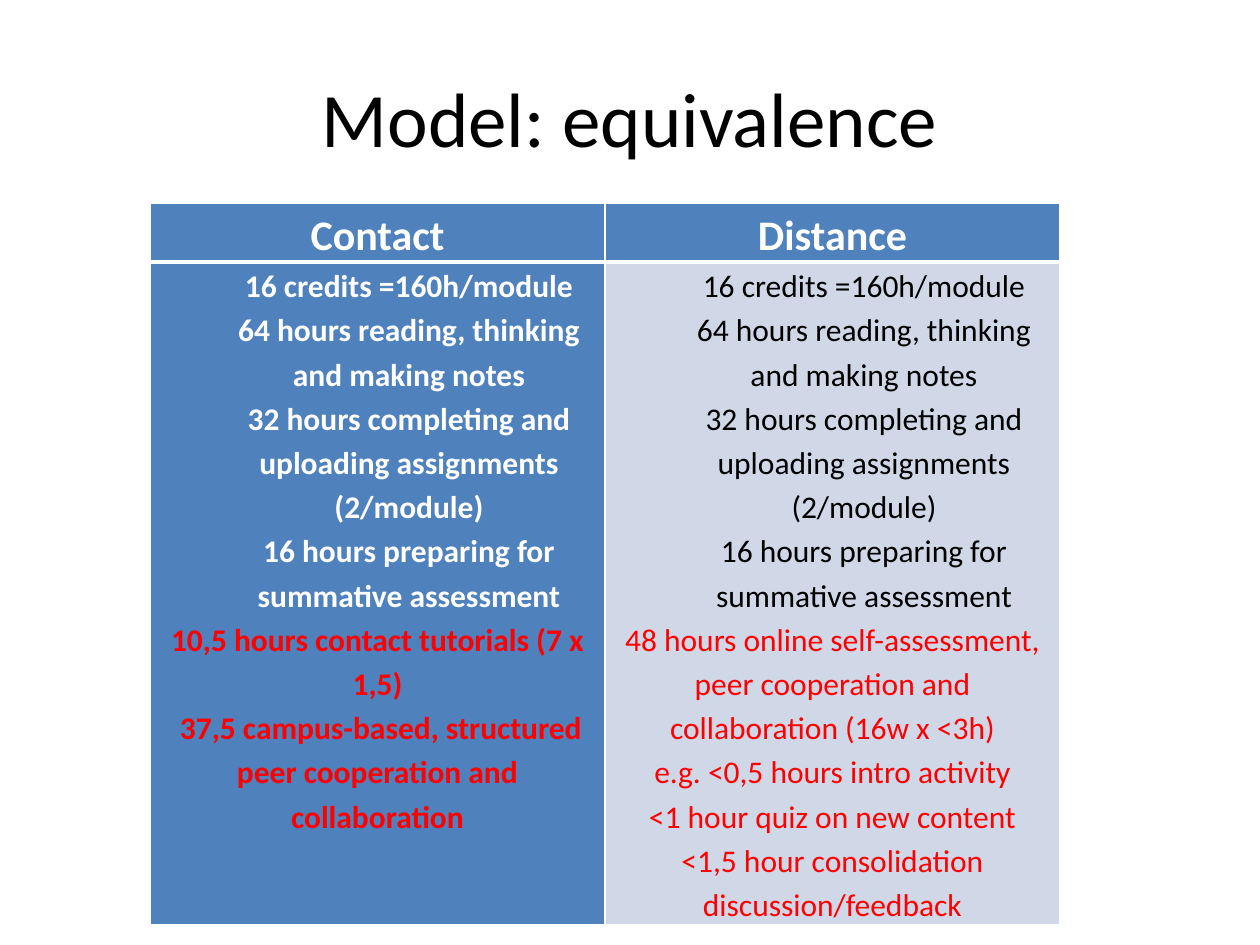
from dataclasses import dataclass

from lxml import etree
from pptx import Presentation
from pptx import util as u
from pptx.dml.color import RGBColor
from pptx.enum import text
from pptx.oxml.ns import qn

EMU_PER_PX = 914400 / 126


@dataclass(frozen=True)
class Theme:
    font: str = "Calibri"
    title_size: int = 44
    heading_size: int = 24
    body_size: int = 18
    ink: str = "000000"
    light: str = "FFFFFF"
    accent: str = "FF0000"
    strong_fill: str = "4F81BD"
    pale_fill: str = "D0D8E8"
    thin: int = 1
    thick: int = 3


THEME = Theme()

SHARED_HOURS = [
    "16 credits =160h/module",
    "64 hours reading, thinking and making notes",
    "32 hours completing and uploading assignments (2/module)",
    "16 hours preparing for summative assessment",
]
CONTACT_HOURS = [
    "10,5 hours contact tutorials (7 x 1,5)",
    " 37,5 campus-based, structured peer cooperation and collaboration",
]
DISTANCE_HOURS = [
    "48 hours online self-assessment, peer cooperation and collaboration (16w x <3h)",
    "e.g. <0,5 hours intro activity",
    "<1 hour quiz on new content",
    "<1,5 hour consolidation discussion/feedback",
]
# heading, hours of this mode only, body fill, body colour, bold body
MODES = [
    ("Contact", CONTACT_HOURS, THEME.strong_fill, THEME.light, True),
    ("Distance", DISTANCE_HOURS, THEME.pale_fill, THEME.ink, False),
]


def px(length):
    return u.Emu(round(length * EMU_PER_PX))


def set_format(target, values):
    for name, value in values.items():
        setattr(target, name, value)


def format_font(font, size, color, bold):
    set_format(font, {"name": THEME.font, "size": u.Pt(size), "bold": bold})
    font.color.rgb = RGBColor.from_string(color)


def set_borders(cell, top, bottom):
    """Draw white cell borders; the top and bottom widths are in points."""
    widths = {"lnL": THEME.thin, "lnR": THEME.thin, "lnT": top, "lnB": bottom}
    properties = cell._tc.get_or_add_tcPr()
    for place, (side, width) in enumerate(widths.items()):
        border = etree.Element(qn(f"a:{side}"), w=str(u.Pt(width)))
        fill = etree.SubElement(border, qn("a:solidFill"))
        etree.SubElement(fill, qn("a:srgbClr"), val=THEME.light)
        properties.insert(place, border)


def fill_cell(cell, fill, lines, size, bold):
    """Write lines of (wording, colour, left indent in px) into a cell."""
    set_format(cell, {"margin_left": px(8), "margin_right": px(8),
                      "margin_top": 0, "margin_bottom": 0})
    cell.fill.solid()
    cell.fill.fore_color.rgb = RGBColor.from_string(fill)
    frame = cell.text_frame
    for number, (wording, color, indent) in enumerate(lines):
        paragraph = frame.add_paragraph() if number else frame.paragraphs[0]
        set_format(paragraph, {"alignment": text.PP_ALIGN.CENTER,
                               "line_spacing": 1.15})
        if indent:
            properties = paragraph._p.get_or_add_pPr()
            properties.set("marL", str(px(indent)))
            properties.set("indent", "0")
        run = paragraph.add_run()
        run.text = wording
        format_font(run.font, size, color, bold)


def place_title(slide, left, top, width, height):
    title = slide.shapes.title
    set_format(title, {"left": px(left), "top": px(top),
                       "width": px(width), "height": px(height)})
    frame = title.text_frame
    frame.text = "Model: equivalence"
    frame.vertical_anchor = text.MSO_ANCHOR.MIDDLE
    heading = frame.paragraphs[0]
    heading.alignment = text.PP_ALIGN.CENTER
    format_font(heading.runs[0].font, THEME.title_size, THEME.ink, False)


def place_comparison(slide, left, top, width, heading_height, body_height):
    comparison = slide.shapes.add_table(
        2, len(MODES), px(left), px(top), px(width),
        px(heading_height + body_height)).table
    for row, height in zip(comparison.rows, (heading_height, body_height)):
        row.height = px(height)
    for column, (heading, own_hours, fill, color, bold) in enumerate(MODES):
        comparison.columns[column].width = px(width / len(MODES))
        heading_cell = comparison.cell(0, column)
        fill_cell(heading_cell, THEME.strong_fill,
                  [(heading, THEME.light, 0)], THEME.heading_size, True)
        set_borders(heading_cell, THEME.thin, THEME.thick)
        hours = [(line, color, 63) for line in SHARED_HOURS]
        hours += [(line, THEME.accent, 0) for line in own_hours]
        hours_cell = comparison.cell(1, column)
        fill_cell(hours_cell, fill, hours, THEME.body_size, bold)
        set_borders(hours_cell, THEME.thick, THEME.thin)


def main():
    deck = Presentation()
    set_format(deck, {"slide_width": px(1260), "slide_height": px(945)})
    slide = deck.slides.add_slide(deck.slide_layouts[5])
    place_title(slide, 63, 38, 1134, 157)
    place_comparison(slide, 150, 203, 910, 55, 533)
    deck.save("out.pptx")


if __name__ == "__main__":
    main()
